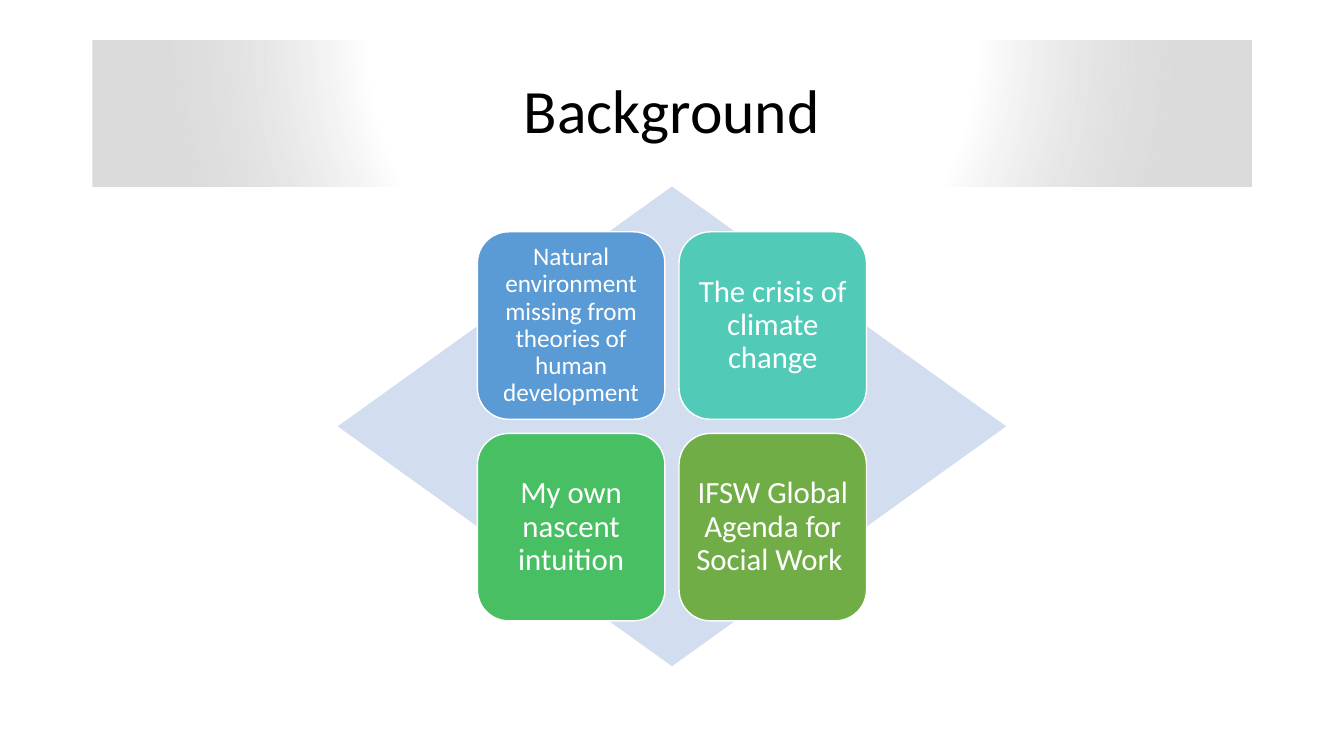
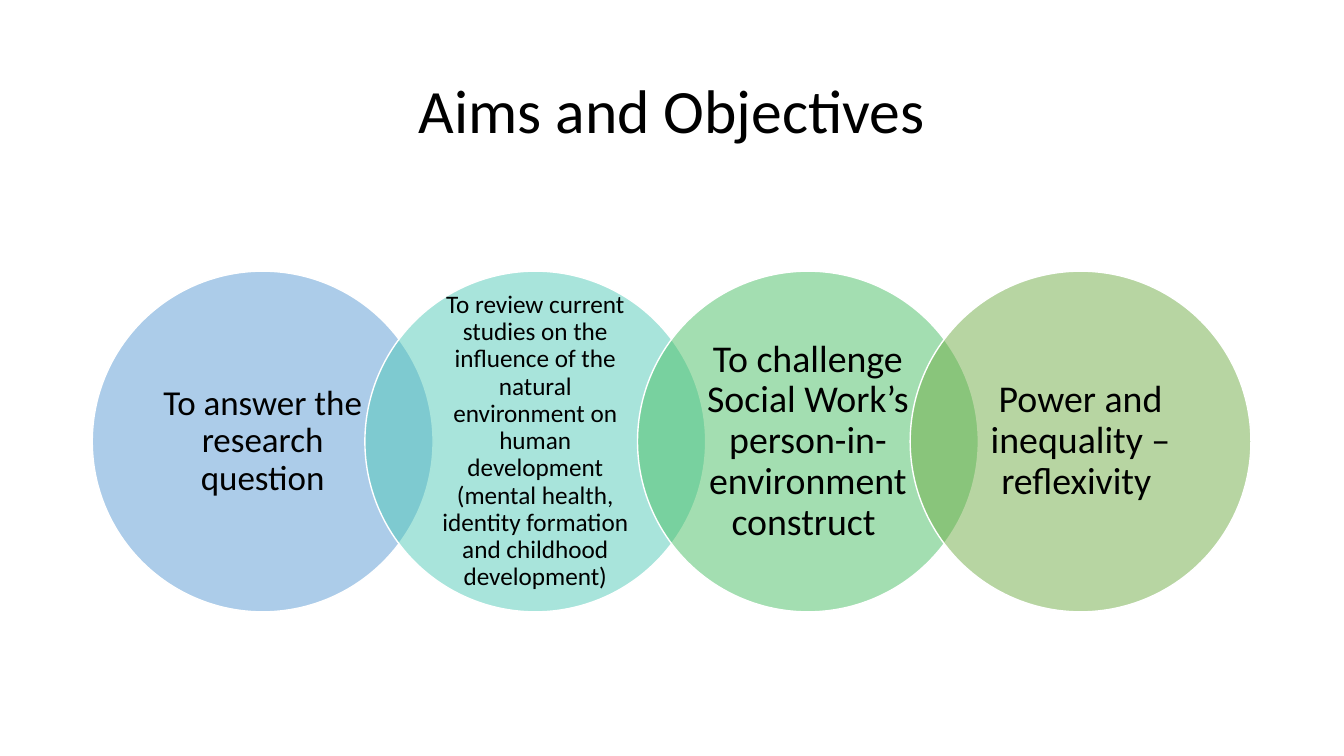
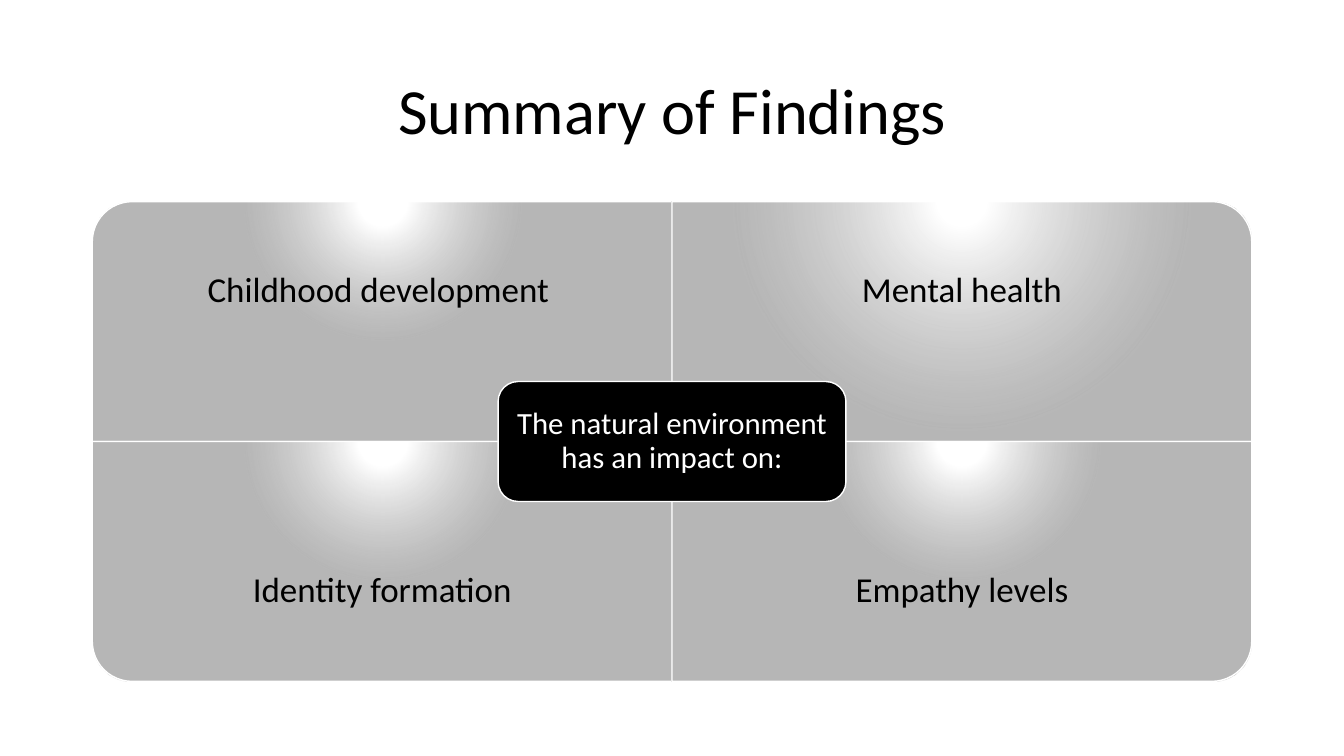
from typing import NamedTuple

from lxml.etree import SubElement
from pptx import Presentation
from pptx.dml.color import RGBColor
from pptx.enum.shapes import MSO_SHAPE
from pptx.enum.text import MSO_ANCHOR, MSO_AUTO_SIZE, PP_ALIGN
from pptx.oxml import parse_xml
from pptx.oxml.ns import nsdecls, qn
from pptx.util import Inches, Pt

FONT = "Calibri"
WHITE, BLACK = "FFFFFF", "000000"
BLUE, TEAL, GREEN, OLIVE = "5B9BD5", "52CAB8", "49BF64", "70AD47"
PALE_BLUE = "D2DEEF"

SLIDE_W, SLIDE_H = 13.33, 7.5
CONTENT_W = 11.5
MARGIN = (SLIDE_W - CONTENT_W) / 2
CENTER_X = SLIDE_W / 2


class Box(NamedTuple):
    """Left, top, width and height in inches."""
    x: float
    y: float
    w: float
    h: float

    def emu(self) -> list:
        return [Inches(v) for v in self]


class Label(NamedTuple):
    text: str
    size: float
    fill: str = WHITE


class Stop(NamedTuple):
    """Gradient stop; position and opacity in percent."""
    pos: int
    color: str
    alpha: int = 100


class Quadrant(NamedTuple):
    text: str
    col: int
    row: int
    rotation: int
    fade_end: int = 45


def rgb(color: str) -> RGBColor:
    return RGBColor.from_string(color)


def centered_box(cx: float, cy: float, w: float, h: float) -> Box:
    return Box(cx - w / 2, cy - h / 2, w, h)


def write(s, label: Label, color: str, inset_x: float = 0.1, inset_y: float = 0.05) -> None:
    """Put one centred paragraph in a shape."""
    tf = s.text_frame
    tf.text = label.text
    tf.word_wrap = True
    tf.auto_size = MSO_AUTO_SIZE.NONE
    tf.vertical_anchor = MSO_ANCHOR.MIDDLE
    tf.margin_left = tf.margin_right = Inches(inset_x)
    tf.margin_top = tf.margin_bottom = Inches(inset_y)
    p = tf.paragraphs[0]
    p.alignment = PP_ALIGN.CENTER
    p.line_spacing = 0.9
    font = p.runs[0].font
    font.name, font.size = FONT, Pt(label.size)
    font.color.rgb = rgb(color)


def add_filled(slide, kind, box: Box, fill: str, outlined: bool = True, alpha: int = 100):
    s = slide.shapes.add_shape(kind, *box.emu())
    s.shadow.inherit = False
    s.fill.solid()
    s.fill.fore_color.rgb = rgb(fill)
    if alpha < 100:
        clr = s.fill._xPr.find(qn("a:solidFill"))[0]
        SubElement(clr, qn("a:alpha")).set("val", str(alpha * 1000))
    if outlined:
        s.line.color.rgb = rgb(WHITE)
        s.line.width = Pt(1)
    else:
        s.line.fill.background()
    return s


def set_glow(s, stops: list[Stop]) -> None:
    """Fill with a circular gradient centred above the shape."""
    gs = "".join(
        f'<a:gs pos="{t.pos * 1000}"><a:srgbClr val="{t.color}">'
        f'<a:alpha val="{t.alpha * 1000}"/></a:srgbClr></a:gs>' for t in stops)
    grad = parse_xml(
        f'<a:gradFill {nsdecls("a")} rotWithShape="0"><a:gsLst>{gs}</a:gsLst>'
        '<a:path path="circle"><a:fillToRect l="50000" t="-80000" r="50000" b="180000"/>'
        '</a:path></a:gradFill>')
    s.fill.solid()
    solid = s.fill._xPr.find(qn("a:solidFill"))
    solid.getparent().replace(solid, grad)


def add_titled_slide(prs, title: str, size: float = 44):
    slide = prs.slides.add_slide(prs.slide_layouts[5])
    s = slide.shapes.title
    s.left, s.top, s.width, s.height = Box(MARGIN, 0.4, CONTENT_W, 1.45).emu()
    write(s, Label(title, size), BLACK)
    return slide


def build_background(prs) -> None:
    slide = add_titled_slide(prs, "Background")
    set_glow(slide.shapes.title,
             [Stop(12, WHITE), Stop(52, WHITE), Stop(86, "C7C7C7", 63)])
    center_y, tile, pitch = 4.23, 1.86, 2.0
    add_filled(slide, MSO_SHAPE.DIAMOND, centered_box(CENTER_X, center_y, 6.63, 4.76),
               PALE_BLUE, outlined=False)
    tiles = [
        Label("Natural environment missing from theories of human development", 18, BLUE),
        Label("The crisis of climate change", 22, TEAL),
        Label("My own nascent intuition", 22, GREEN),
        Label("IFSW Global Agenda for Social Work ", 22, OLIVE),
    ]
    for i, label in enumerate(tiles):
        row, col = divmod(i, 2)
        box = centered_box(CENTER_X + (col - 0.5) * pitch,
                           center_y + (row - 0.5) * pitch, tile, tile)
        s = add_filled(slide, MSO_SHAPE.ROUNDED_RECTANGLE, box, label.fill)
        write(s, label, WHITE, 0.07, 0.07)


def build_aims(prs) -> None:
    slide = add_titled_slide(prs, "Aims and Objectives")
    diameter = 3.38
    pitch = 0.8 * diameter
    circles = [
        Label("To answer the research question", 25, BLUE),
        Label("To review current studies on the influence of the natural environment on "
              "human development (mental health, identity formation and childhood "
              "development)", 18, TEAL),
        Label("To challenge Social Work’s person-in-environment construct ", 27, GREEN),
        Label("Power and inequality – reflexivity ", 27, OLIVE),
    ]
    for i, label in enumerate(circles):
        box = Box(MARGIN + i * pitch, 2.69, diameter, diameter)
        s = add_filled(slide, MSO_SHAPE.OVAL, box, label.fill, alpha=50)
        write(s, label, BLACK, 0.18, 0.03)


def build_findings(prs) -> None:
    slide = add_titled_slide(prs, "Summary of Findings", 46)
    top, cell_w, cell_h = 2.0, CONTENT_W / 2, 2.38
    text_h = 0.75 * cell_h
    quadrants = [
        Quadrant("Childhood development ", 0, 0, 270),
        Quadrant("Mental health", 1, 0, 0, 74),
        Quadrant("Identity formation", 0, 1, 180),
        Quadrant("Empathy levels", 1, 1, 90),
    ]
    for q in quadrants:
        x, y = MARGIN + q.col * cell_w, top + q.row * cell_h
        w, h = (cell_h, cell_w) if q.rotation % 180 else (cell_w, cell_h)
        box = centered_box(x + cell_w / 2, y + cell_h / 2, w, h)
        s = add_filled(slide, MSO_SHAPE.ROUND_1_RECTANGLE, box, WHITE)
        s.rotation = q.rotation
        set_glow(s, [Stop(0, WHITE, 38), Stop(8, WHITE), Stop(q.fade_end, "919191", 66)])
        text_box = Box(x, y + q.row * (cell_h - text_h), cell_w, text_h)
        write(slide.shapes.add_textbox(*text_box.emu()), Label(q.text, 25), BLACK, 0.19, 0.19)

    hub = add_filled(slide, MSO_SHAPE.ROUNDED_RECTANGLE,
                     centered_box(CENTER_X, top + cell_h, 0.6 * cell_w, cell_h / 2), BLACK)
    write(hub, Label("The natural environment has an impact on:", 22), WHITE, 0.09, 0.09)


def main() -> None:
    prs = Presentation()
    prs.slide_width, prs.slide_height = Inches(SLIDE_W), Inches(SLIDE_H)
    build_background(prs)
    build_aims(prs)
    build_findings(prs)
    prs.save("out.pptx")


if __name__ == "__main__":
    main()
